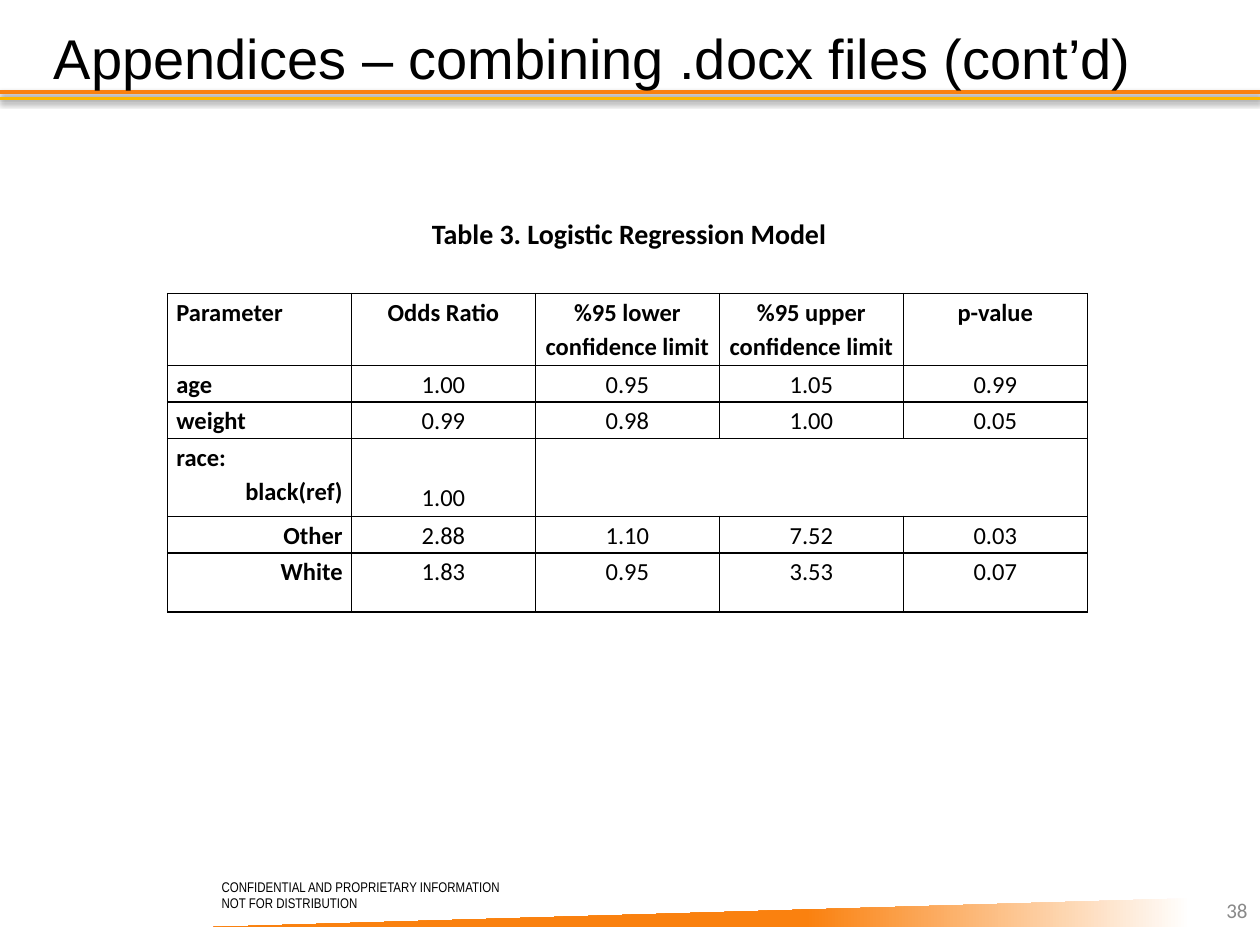
from lxml.etree import SubElement
from pptx import Presentation
from pptx.dml.color import RGBColor
from pptx.enum.shapes import MSO_CONNECTOR, MSO_SHAPE
from pptx.enum.text import MSO_ANCHOR, PP_ALIGN
from pptx.oxml import parse_xml
from pptx.oxml.ns import nsdecls, qn
from pptx.util import Inches, Pt

BLACK = RGBColor(0x00, 0x00, 0x00)
WHITE = RGBColor(0xFF, 0xFF, 0xFF)
GREY = RGBColor(0x89, 0x89, 0x89)
ORANGE = RGBColor(0xFA, 0x81, 0x0F)
AMBER = RGBColor(0xFC, 0xB8, 0x00)
LEFT, CENTER, RIGHT = PP_ALIGN.LEFT, PP_ALIGN.CENTER, PP_ALIGN.RIGHT

COLUMN_WIDTH = 1.46
ROW_HEIGHTS = [0.57, 0.29, 0.29, 0.62, 0.29, 0.47]
HEADER = ["Parameter", "Odds Ratio", "%95 lower confidence limit",
          "%95 upper confidence limit", "p-value"]
RESULTS = [
    ([("age", LEFT)], ["1.00", "0.95", "1.05", "0.99"]),
    ([("weight", LEFT)], ["0.99", "0.98", "1.00", "0.05"]),
    ([("race:", LEFT), ("black(ref)", RIGHT)], ["1.00"]),
    ([("Other", RIGHT)], ["2.88", "1.10", "7.52", "0.03"]),
    ([("White", RIGHT)], ["1.83", "0.95", "3.53", "0.07"]),
]
REFERENCE_ROW = 3


class SlideBuilder:
    """Holds the style and the current slide, and adds each kind of element."""

    def __init__(self, slide):
        self.slide = slide
        self.font = {"name": "Calibri", "size": Pt(14), "bold": False}

    def add_lines(self, tf, lines, color=BLACK, spacing=None, **font):
        for i, (text, align) in enumerate(lines):
            p = tf.paragraphs[0] if i == 0 else tf.add_paragraph()
            p.alignment = align
            if spacing:
                p.line_spacing = spacing
            r = p.add_run()
            r.text = text
            for key, value in {**self.font, **font}.items():
                setattr(r.font, key, value)
            r.font.color.rgb = color

    def text(self, box, lines, anchor=MSO_ANCHOR.TOP, **style):
        tf = self.slide.shapes.add_textbox(*map(Inches, box)).text_frame
        tf.word_wrap = True
        tf.vertical_anchor = anchor
        self.add_lines(tf, lines, **style)

    def rule(self, y, color):
        line = self.slide.shapes.add_connector(
            MSO_CONNECTOR.STRAIGHT, 0, Inches(y), Inches(10), Inches(y))
        line.line.color.rgb = color
        line.line.width = Pt(2)
        effects = SubElement(line._element.spPr, qn("a:effectLst"))
        effects.append(parse_xml(
            f'<a:outerShdw {nsdecls("a")} blurRad="{Pt(3.1)}" dist="{Pt(1.6)}" '
            'dir="5400000" rotWithShape="0"><a:srgbClr val="000000">'
            '<a:alpha val="38000"/></a:srgbClr></a:outerShdw>'))

    def wedge(self, box):
        s = self.slide.shapes.add_shape(MSO_SHAPE.RIGHT_TRIANGLE, *map(Inches, box))
        s.shadow.inherit = False
        s.line.fill.background()
        s.fill.gradient()
        s.fill.gradient_angle = 0
        stops = [(0, WHITE), (0.39, ORANGE)]
        for stop, (position, color) in zip(s.fill.gradient_stops, stops):
            stop.position = position
            stop.color.rgb = color
        s._element.spPr.xfrm.set("flipH", "1")

    def cell(self, cell, lines, **style):
        for side in ("left", "right"):
            setattr(cell, f"margin_{side}", Inches(0.07))
        cell.margin_top = cell.margin_bottom = 0
        self.add_lines(cell.text_frame, lines, **style)

    def grid(self, left, top, width, heights, columns):
        table = self.slide.shapes.add_table(
            len(heights), columns, Inches(left), Inches(top),
            Inches(width * columns), Inches(sum(heights))).table
        for column in table.columns:
            column.width = Inches(width)
        for row, height in zip(table.rows, heights):
            row.height = Inches(height)
        for cell in table.iter_cells():
            tc_pr = cell._tc.get_or_add_tcPr()
            for side in "LRTB":
                tc_pr.append(parse_xml(
                    f'<a:ln{side} {nsdecls("a")} w="{Pt(1)}"><a:solidFill>'
                    f'<a:srgbClr val="{BLACK}"/></a:solidFill></a:ln{side}>'))
            cell.fill.background()
        return table


def main():
    prs = Presentation()
    prs.slide_width, prs.slide_height = Inches(10), Inches(7.5)
    b = SlideBuilder(prs.slides.add_slide(prs.slide_layouts[6]))

    b.wedge((1.62, 7.13, 7.83, 0.23))
    b.rule(0.73, ORANGE)
    b.rule(0.78, AMBER)
    b.text((1.66, 6.92, 2.92, 0.37),
           [("CONFIDENTIAL AND PROPRIETARY INFORMATION", LEFT),
            ("NOT FOR DISTRIBUTION", LEFT)], name="Arial Narrow", size=Pt(8))
    b.text((7.67, 7.02, 2.33, 0.4), [("38", RIGHT)], MSO_ANCHOR.MIDDLE,
           color=GREY, size=Pt(12))

    table = b.grid(1.33, 2.33, COLUMN_WIDTH, ROW_HEIGHTS, len(HEADER))
    table.cell(REFERENCE_ROW, 2).merge(table.cell(REFERENCE_ROW, 4))
    for col, title in enumerate(HEADER):
        b.cell(table.cell(0, col), [(title, CENTER if col else LEFT)],
               spacing=1.15, bold=True)
    for row, (label, values) in enumerate(RESULTS, 1):
        b.cell(table.cell(row, 0), label, spacing=1.15, bold=True)
        for col, value in enumerate(values, 1):
            b.cell(table.cell(row, col), [(value, CENTER)],
                   spacing=2.5 if row == REFERENCE_ROW else 1.15)

    b.text((3.33, 1.67, 3.58, 0.37),
           [("Table 3. Logistic Regression Model", LEFT)], size=Pt(16), bold=True)
    b.text((0.33, 0.17, 8.92, 0.57),
           [("Appendices – combining .docx files (cont’d)", LEFT)],
           MSO_ANCHOR.MIDDLE, name="Arial", size=Pt(32))
    prs.save("out.pptx")


if __name__ == "__main__":
    main()
